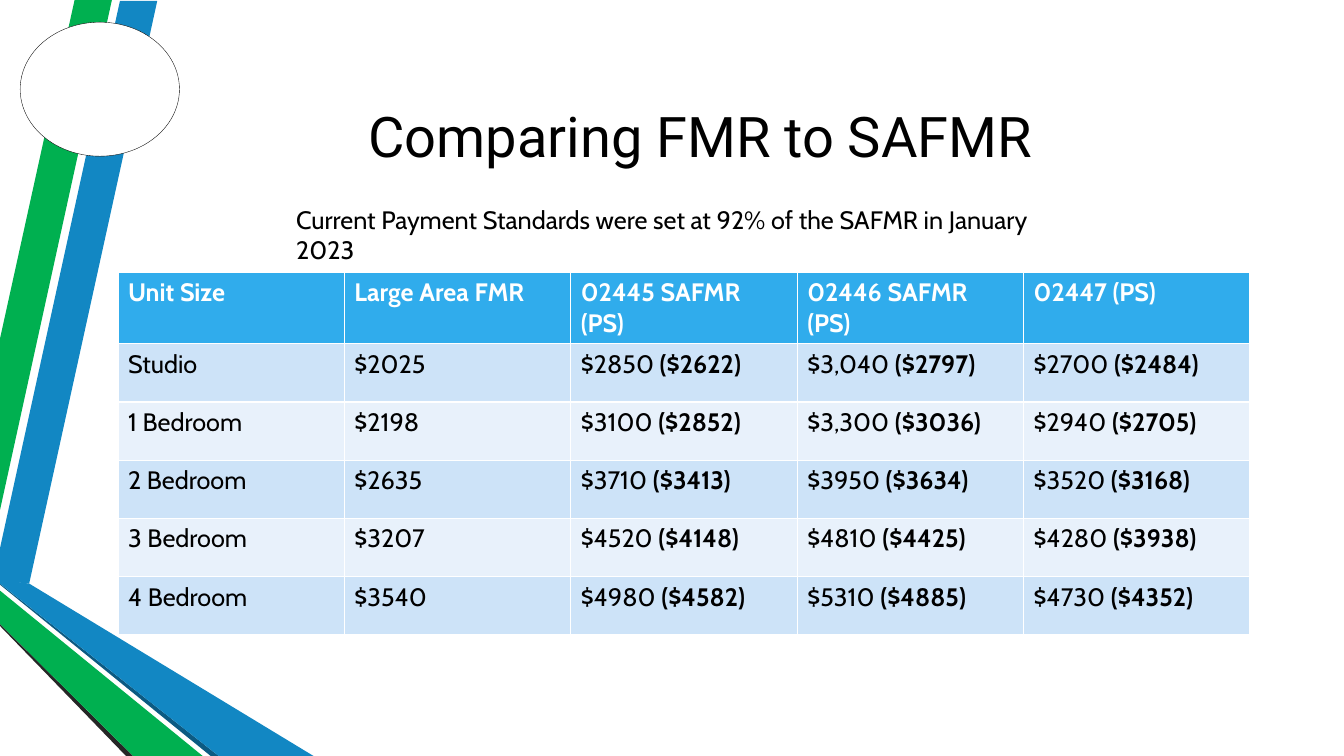
import pptx
import pptx.dml.color
import pptx.enum.shapes
import pptx.enum.text
import pptx.util

RGBColor = pptx.dml.color.RGBColor
Inches = pptx.util.Inches
Pt = pptx.util.Pt

BLACK = RGBColor(0x00, 0x00, 0x00)
WHITE = RGBColor(0xFF, 0xFF, 0xFF)
BLUE = RGBColor(0x12, 0x87, 0xC3)
DARK_BLUE = RGBColor(0x0C, 0x5A, 0x82)
GREEN = RGBColor(0x00, 0xB0, 0x50)
CHARCOAL = RGBColor(0x26, 0x26, 0x26)
HEADER = RGBColor(0x30, 0xAC, 0xEC)
BANDS = [RGBColor(0xCD, 0xE3, 0xF8), RGBColor(0xE8, 0xF1, 0xFB)]


def format_run(r, size, font, color, bold=False):
    r.font.size = Pt(size)
    r.font.name = font
    r.font.color.rgb = color
    r.font.bold = bold


prs = pptx.Presentation()
prs.slide_width = Inches(13.33)
prs.slide_height = Inches(7.5)
s = prs.slides.add_slide(prs.slide_layouts[5])

# Ribbons along the left edge, in hundredths of an inch
ribbons = [
    (BLUE, [(0, 544), (0, 576), (29, 579), (156, 1), (119, 1)]),
    (GREEN, [(111, 0), (74, 0), (0, 336), (0, 506)]),
    (CHARCOAL, [(0, 619), (0, 621), (125, 750), (132, 750)]),
    (DARK_BLUE, [(0, 579), (0, 580), (209, 750), (217, 750)]),
    (BLUE, [(0, 579), (217, 750), (311, 750), (29, 579), (0, 575)]),
    (GREEN, [(0, 619), (132, 750), (201, 750), (0, 586)]),
]
for color, points in ribbons:
    builder = s.shapes.build_freeform(*points[0], scale=Inches(0.01))
    builder.add_line_segments(points[1:], close=True)
    sp = builder.convert_to_shape()
    sp.shadow.inherit = False
    sp.fill.solid()
    sp.fill.fore_color.rgb = color
    sp.line.fill.background()

# Badge
sp = s.shapes.add_shape(pptx.enum.shapes.MSO_SHAPE.OVAL,
                        Inches(0.2), Inches(0.22), Inches(1.58), Inches(1.33))
sp.shadow.inherit = False
sp.fill.solid()
sp.fill.fore_color.rgb = WHITE
sp.line.color.rgb = BLACK
sp.line.width = Pt(0.25)

# Title
title = s.shapes.title
title.left, title.top = Inches(1.33), Inches(0.5)
title.width, title.height = Inches(11.23), Inches(1.68)
tf = title.text_frame
tf.text = "Comparing FMR to SAFMR"
tf.vertical_anchor = pptx.enum.text.MSO_ANCHOR.MIDDLE
p = tf.paragraphs[0]
p.alignment = pptx.enum.text.PP_ALIGN.CENTER
format_run(p.runs[0], 40, "Roboto", BLACK)

# Rent table: plain amount, then payment standard in bold
rows = [
    ["Unit Size", "Large Area FMR", "02445 SAFMR (PS)", "02446 SAFMR (PS)", "02447 (PS)"],
    ["Studio", "$2025", "$2850 ($2622)", "$3,040 ($2797)", "$2700 ($2484)"],
    ["1 Bedroom", "$2198", "$3100 ($2852)", "$3,300 ($3036)", "$2940 ($2705)"],
    ["2 Bedroom", "$2635", "$3710 ($3413)", "$3950 ($3634)", "$3520 ($3168)"],
    ["3 Bedroom", "$3207", "$4520 ($4148)", "$4810 ($4425)", "$4280 ($3938)"],
    ["4 Bedroom", "$3540", "$4980 ($4582)", "$5310 ($4885)", "$4730 ($4352)"],
]
table = s.shapes.add_table(len(rows), len(rows[0]), Inches(1.17), Inches(2.7),
                           Inches(11.23), Inches(3.47)).table
for i, row in enumerate(rows):
    for j, text in enumerate(row):
        cell = table.cell(i, j)
        cell.fill.solid()
        cell.fill.fore_color.rgb = BANDS[(i - 1) % 2] if i else HEADER
        p = cell.text_frame.paragraphs[0]
        if i == 0:
            p.text = text
            format_run(p.runs[0], 18, "Cabin", WHITE, True)
            continue
        amount, bracket, standard = text.partition("(")
        p.text = amount
        format_run(p.runs[0], 18, "Cabin", BLACK)
        if standard:
            r = p.add_run()
            r.text = bracket + standard
            format_run(r, 18, "Cabin", BLACK, True)

# Note above the table
note = s.shapes.add_textbox(Inches(2.84), Inches(1.98), Inches(7.83), Inches(0.4))
tf = note.text_frame
tf.word_wrap = True
tf.text = "Current Payment Standards were set at 92% of the SAFMR in January 2023"
format_run(tf.paragraphs[0].runs[0], 18, "Cabin", BLACK)

prs.save("out.pptx")
